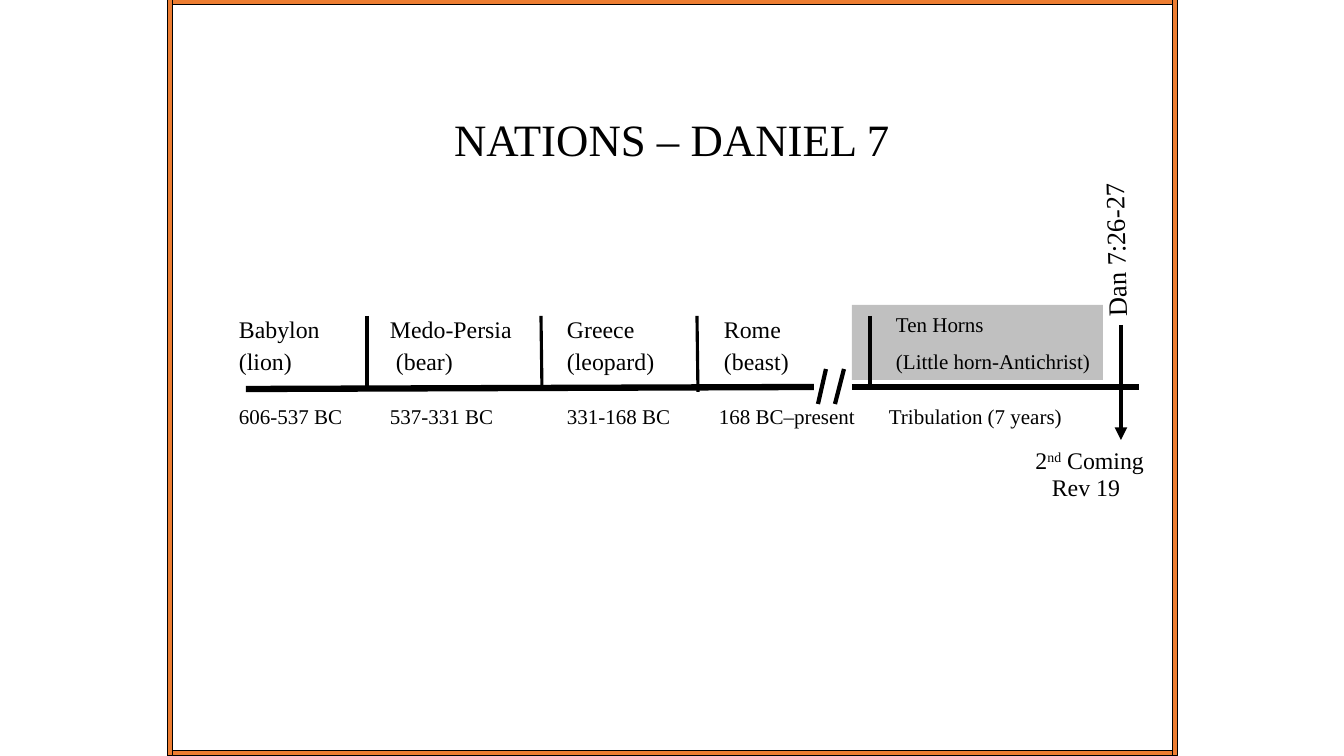
from dataclasses import dataclass

from lxml import etree
from pptx import Presentation
from pptx.dml.color import RGBColor
from pptx.enum.shapes import MSO_CONNECTOR, MSO_SHAPE
from pptx.enum.text import MSO_ANCHOR, PP_ALIGN
from pptx.oxml.ns import qn
from pptx.util import Pt

LEFT, CENTER, RIGHT = PP_ALIGN.LEFT, PP_ALIGN.CENTER, PP_ALIGN.RIGHT
RECTANGLE, STRAIGHT = MSO_SHAPE.RECTANGLE, MSO_CONNECTOR.STRAIGHT


@dataclass(frozen=True)
class Theme:
    font: str = "Times New Roman"
    ink: RGBColor = RGBColor(0, 0, 0)
    frame: RGBColor = RGBColor(0xED, 0x7D, 0x31)
    highlight: RGBColor = RGBColor(0xC0, 0xC0, 0xC0)
    title: float = 32
    reference: float = 19
    body: float = 17
    small: float = 15
    frame_line: float = 0.75
    tick: float = 2.25
    mark: float = 3
    axis: float = 4.5
    gap: float = 8.5


THEME = Theme()
SLIDE_WIDTH, SLIDE_HEIGHT = 1344, 756

TITLE = "NATIONS – DANIEL 7"
REFERENCE = "Dan 7:26-27"
TRIBULATION = ["Ten Horns", "(Little horn-Antichrist)"]
# Entries, tab stops in px, type size, line spacing
TIMELINE_ROWS = [
    (["Babylon", "Medo-Persia", "Greece", "Rome"],
     [151, 328, 485], THEME.body, 0.7),
    (["(lion)", "(bear)", "(leopard)", "(beast)"],
     [157, 328, 485], THEME.body, 0.7),
    (["606-537 BC", "537-331 BC", "331-168 BC", "168 BC–present",
      "Tribulation (7 years)"],
     [151, 328, 480, 650], THEME.small, 1.5),
]
# From and to in px, line width
TIMELINE_LINES = [
    ((246, 389), (814, 387), THEME.axis),
    ((367, 316), (367, 386), THEME.tick),
    ((697, 316), (698, 392), THEME.tick),
    ((541, 316), (542, 390), THEME.tick),
    ((870, 316), (870, 387), THEME.tick),
    ((852, 387), (1139, 387), THEME.axis),
    ((826, 369), (818, 404), THEME.mark),
    ((844, 369), (835, 404), THEME.mark),
]
COMING_ARROW = ((1121, 325), (1121, 440), THEME.mark)

FRAME_LEFT, FRAME_WIDTH, FRAME_BAR = 168, 1008, 5
FRAME_BARS = [
    (FRAME_LEFT, SLIDE_HEIGHT - FRAME_BAR, FRAME_WIDTH, FRAME_BAR),
    (FRAME_LEFT, 0, FRAME_WIDTH, FRAME_BAR),
    (FRAME_LEFT, 0, FRAME_BAR, SLIDE_HEIGHT),
    (1173, 0, FRAME_BAR, SLIDE_HEIGHT),
]


def px(length):
    return round(length * 914400 / 100.8)


def set_insets(frame, side, end=5):
    frame.margin_left = frame.margin_right = px(side)
    frame.margin_top = frame.margin_bottom = px(end)


def add_text_box(slide, box, side=10):
    shape = slide.shapes.add_textbox(*map(px, box))
    shape.text_frame.word_wrap = True
    set_insets(shape.text_frame, side)
    return shape


def add_paragraph(frame, size, align=LEFT, spacing=None, before=THEME.gap,
                  tabs=()):
    """Use the frame's empty first paragraph, then append further ones."""
    first = frame.paragraphs[0]
    is_first = not first.runs
    paragraph = first if is_first else frame.add_paragraph()
    paragraph.alignment = align
    paragraph.line_spacing = spacing
    paragraph.space_before = Pt(0 if is_first else before)
    if tabs:
        tab_list = etree.SubElement(paragraph._p.get_or_add_pPr(), qn("a:tabLst"))
        for stop in tabs:
            etree.SubElement(tab_list, qn("a:tab"), pos=str(px(stop)), algn="l")
    font = paragraph.font
    font.name, font.size, font.color.rgb = THEME.font, Pt(size), THEME.ink
    return paragraph


def add_run(paragraph, text, size=None):
    run = paragraph.add_run()
    run.text = text
    if size:
        run.font.size = Pt(size)
    return run


def add_rectangle(slide, box, color):
    shape = slide.shapes.add_shape(RECTANGLE, *map(px, box))
    shape.shadow.inherit = False
    shape.fill.solid()
    shape.fill.fore_color.rgb = color
    return shape


def add_line(group, start, end, width):
    line = group.shapes.add_connector(STRAIGHT, *map(px, start + end))
    line.line.color.rgb = THEME.ink
    line.line.width = Pt(width)
    etree.SubElement(line._element.spPr, qn("a:effectLst"))
    return line


def add_timeline_text(slide):
    frame = add_text_box(slide, (229, 318, 926, 121)).text_frame
    for entries, tabs, size, spacing in TIMELINE_ROWS:
        paragraph = add_paragraph(frame, THEME.body, spacing=spacing, tabs=tabs)
        for index, entry in enumerate(entries):
            if index:
                add_run(paragraph, "\t")
            add_run(paragraph, entry, size if size != THEME.body else None)


def add_tribulation(slide):
    shape = add_rectangle(slide, (852, 305, 251, 75), THEME.highlight)
    shape.line.fill.background()
    frame = shape.text_frame
    frame.word_wrap = True
    frame.vertical_anchor = MSO_ANCHOR.MIDDLE
    set_insets(frame, 5)
    frame.margin_left = px(44)
    for text in TRIBULATION:
        add_run(add_paragraph(frame, THEME.small), text)


def add_second_coming(slide):
    frame = add_text_box(slide, (1017, 444, 138, 64), side=11).text_frame
    coming = add_paragraph(frame, THEME.body, RIGHT, 0.9)
    add_run(coming, "2")
    ordinal = add_run(coming, "nd")
    ordinal._r.get_or_add_rPr().set("baseline", "30000")
    add_run(coming, " Coming")
    add_run(add_paragraph(frame, THEME.body, CENTER, 0.3, before=11), "Rev 19")


def main():
    presentation = Presentation()
    presentation.slide_width = px(SLIDE_WIDTH)
    presentation.slide_height = px(SLIDE_HEIGHT)
    slide = presentation.slides.add_slide(presentation.slide_layouts[6])

    add_timeline_text(slide)
    add_tribulation(slide)
    title = add_text_box(slide, (385, 107, 574, 66))
    add_run(add_paragraph(title.text_frame, THEME.title, CENTER), TITLE)

    for box in FRAME_BARS:
        bar = add_rectangle(slide, box, THEME.frame)
        bar.line.color.rgb = THEME.ink
        bar.line.width = Pt(THEME.frame_line)

    reference = add_text_box(slide, (1036, 227, 159, 43), side=11)
    reference.rotation = 268.6
    add_run(add_paragraph(reference.text_frame, THEME.reference), REFERENCE)
    add_second_coming(slide)

    timeline = slide.shapes.add_group_shape()
    for start, end, width in TIMELINE_LINES:
        add_line(timeline, start, end, width)
    arrow = add_line(timeline, *COMING_ARROW)
    etree.SubElement(arrow.line._get_or_add_ln(), qn("a:tailEnd"), type="triangle")

    presentation.save("out.pptx")


if __name__ == "__main__":
    main()
